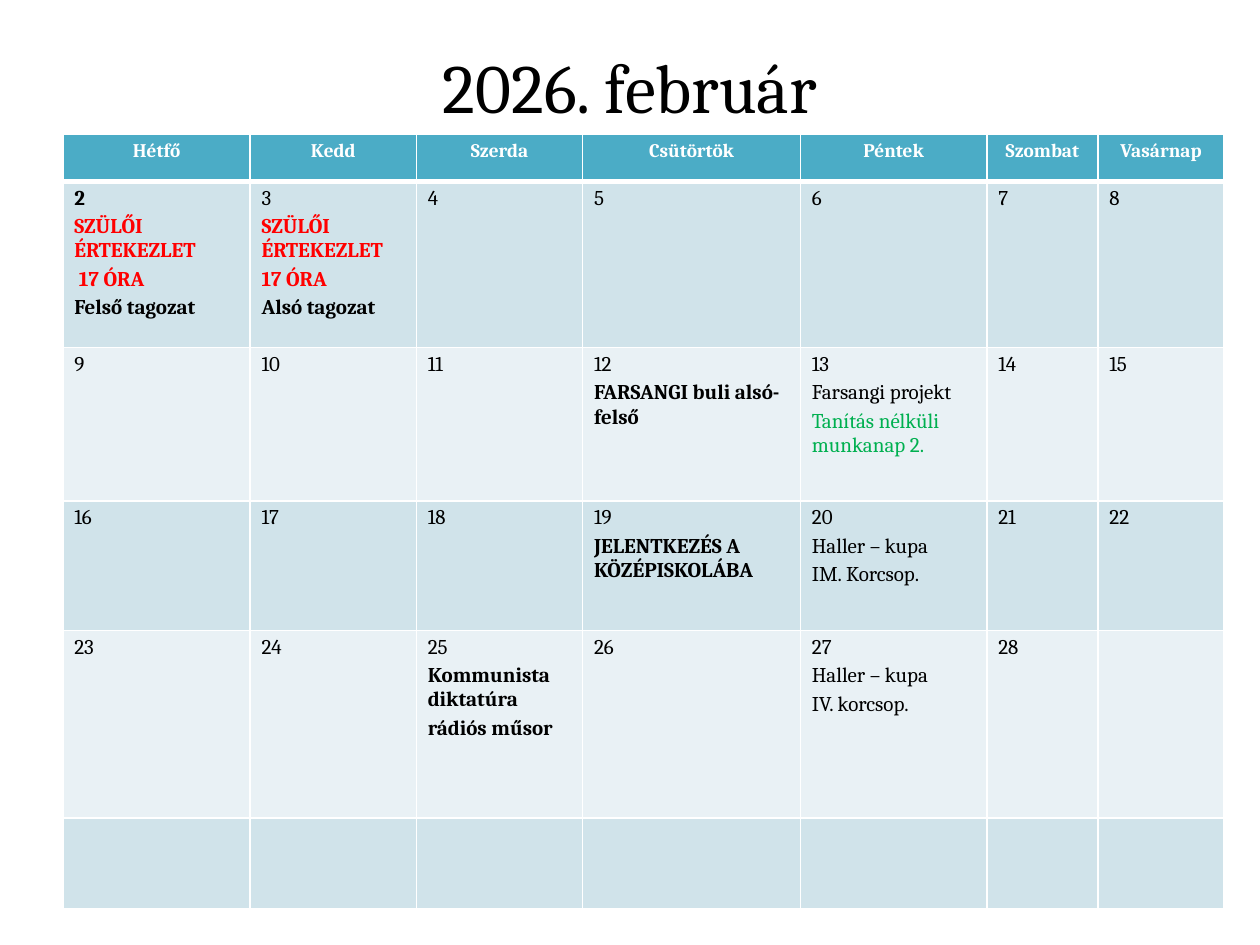
"""Build the February 2026 school calendar slide."""
from lxml import etree
from pptx import Presentation
from pptx.dml.color import RGBColor
from pptx.enum.text import MSO_ANCHOR, PP_ALIGN
from pptx.oxml.ns import qn
from pptx.util import Pt

CENTER, LEFT, MIDDLE = PP_ALIGN.CENTER, PP_ALIGN.LEFT, MSO_ANCHOR.MIDDLE

THEME = {
    "font": "Cambria",
    "title_size": 39.6, "header_size": 11, "day_size": 12,
    "black": "000000", "white": "FFFFFF", "red": "FF0000", "green": "00B050",
    "header_fill": "4BACC6", "week_fills": ("D0E3EA", "E9F1F5"),
    "border": 1, "header_rule": 3, "line_gap": 2.4,
}

TITLE = "2026. február"
WEEKDAYS = ["Hétfő", "Kedd", "Szerda", "Csütörtök", "Péntek", "Szombat", "Vasárnap"]
FIRST_DAY, LAST_DAY = 2, 28
BOLD_DAYS = {2}
EVENTS = {
    2: [("SZÜLŐI ÉRTEKEZLET", "red", True), (" 17 ÓRA", "red", True),
        ("Felső tagozat", "black", True)],
    3: [("SZÜLŐI ÉRTEKEZLET", "red", True), ("17 ÓRA", "red", True),
        ("Alsó tagozat", "black", True)],
    12: [("FARSANGI buli alsó-felső", "black", True)],
    13: [("Farsangi projekt", "black", False),
         ("Tanítás nélküli munkanap 2.", "green", False)],
    19: [("JELENTKEZÉS A KÖZÉPISKOLÁBA", "black", True)],
    20: [("Haller – kupa", "black", False), ("IM. Korcsop.", "black", False)],
    25: [("Kommunista diktatúra", "black", True), ("rádiós műsor", "black", True)],
    27: [("Haller – kupa", "black", False), ("IV. korcsop.", "black", False)],
}

SLIDE_SIZE = (720, 540)
TITLE_BOX = (36, 21.6, 648, 55.4)
CALENDAR_LEFT, CALENDAR_TOP = 36, 77
COLUMN_WIDTHS = [107, 95, 95, 124.5, 106.5, 63.5, 72]
ROW_HEIGHTS = [26.6, 95, 87.6, 74, 107.4, 52]
MARGIN_X, MARGIN_Y = 6.5, 3


def style_text(paragraph, size, color, bold, align):
    paragraph.alignment = align
    for run in paragraph.runs:
        run.font.name = THEME["font"]
        run.font.size = Pt(size)
        run.font.bold = bold
        run.font.color.rgb = RGBColor.from_string(THEME[color])


def set_borders(cell, top, bottom):
    properties = cell._tc.get_or_add_tcPr()
    widths = {"a:lnL": THEME["border"], "a:lnR": THEME["border"],
              "a:lnT": top, "a:lnB": bottom}
    for tag, width in widths.items():
        line = etree.SubElement(properties, qn(tag), w=str(Pt(width)))
        fill = etree.SubElement(line, qn("a:solidFill"))
        etree.SubElement(fill, qn("a:srgbClr"), val=THEME["white"])


def fill_cell(cell, lines, size, align, fill):
    cell.margin_left = cell.margin_right = Pt(MARGIN_X)
    cell.margin_top = cell.margin_bottom = Pt(MARGIN_Y)
    cell.fill.solid()
    cell.fill.fore_color.rgb = RGBColor.from_string(fill)
    cell.text_frame.text = "\n".join(text for text, _, _ in lines)
    for index, (paragraph, (_, color, bold)) in enumerate(
            zip(cell.text_frame.paragraphs, lines)):
        paragraph.space_before = Pt(THEME["line_gap"] if index else 0)
        style_text(paragraph, size, color, bold, align)


def day_lines(day):
    if day > LAST_DAY:
        return []
    return [(str(day), "black", day in BOLD_DAYS)] + EVENTS.get(day, [])


def add_title(slide):
    title = slide.shapes.title
    title.left, title.top, title.width, title.height = map(Pt, TITLE_BOX)
    title.text_frame.text = TITLE
    title.text_frame.vertical_anchor = MIDDLE
    style_text(title.text_frame.paragraphs[0], THEME["title_size"], "black", False, CENTER)


def add_calendar(slide):
    calendar = slide.shapes.add_table(
        len(ROW_HEIGHTS), len(WEEKDAYS), Pt(CALENDAR_LEFT), Pt(CALENDAR_TOP),
        Pt(sum(COLUMN_WIDTHS)), Pt(sum(ROW_HEIGHTS))).table
    for column, width in zip(calendar.columns, COLUMN_WIDTHS):
        column.width = Pt(width)
    for row, height in zip(calendar.rows, ROW_HEIGHTS):
        row.height = Pt(height)

    thin, thick = THEME["border"], THEME["header_rule"]
    for column, weekday in enumerate(WEEKDAYS):
        header = calendar.cell(0, column)
        set_borders(header, thin, thick)
        fill_cell(header, [(weekday, "white", True)], THEME["header_size"],
                  CENTER, THEME["header_fill"])
        for week in range(len(ROW_HEIGHTS) - 1):
            cell = calendar.cell(week + 1, column)
            day = FIRST_DAY + week * len(WEEKDAYS) + column
            set_borders(cell, thin if week else thick, thin)
            fill_cell(cell, day_lines(day), THEME["day_size"], LEFT,
                      THEME["week_fills"][week % 2])


def main():
    presentation = Presentation()
    presentation.slide_width, presentation.slide_height = map(Pt, SLIDE_SIZE)
    slide = presentation.slides.add_slide(presentation.slide_layouts[5])
    add_title(slide)
    add_calendar(slide)
    presentation.save("out.pptx")


if __name__ == "__main__":
    main()
